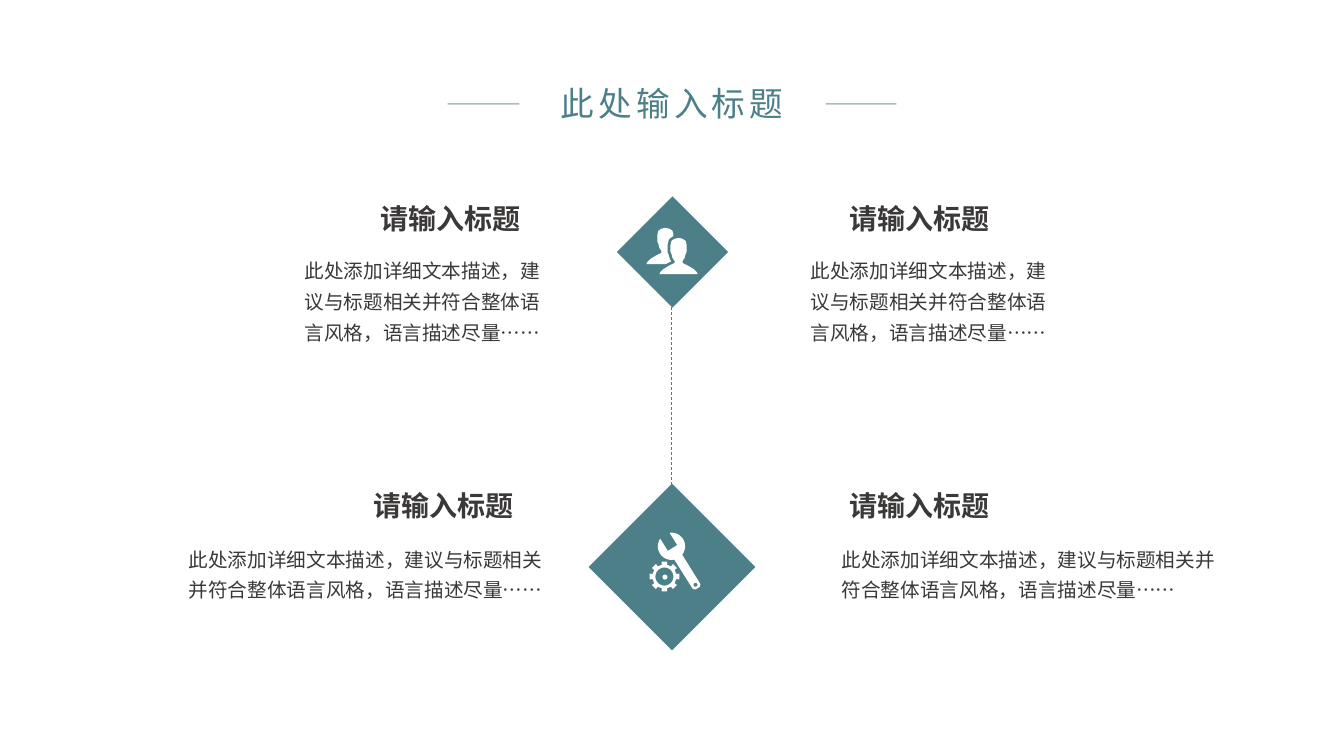
from math import cos, radians, sin

from lxml import etree
from pptx import Presentation
from pptx.dml.color import RGBColor
from pptx.enum.dml import MSO_LINE
from pptx.enum.shapes import MSO_CONNECTOR, MSO_SHAPE
from pptx.enum.text import MSO_ANCHOR, PP_ALIGN
from pptx.oxml.ns import qn
from pptx.util import Inches, Pt

LEFT, CENTER, RIGHT = PP_ALIGN.LEFT, PP_ALIGN.CENTER, PP_ALIGN.RIGHT
TOP = MSO_ANCHOR.TOP
RECTANGLE, ELLIPSE = MSO_SHAPE.RECTANGLE, MSO_SHAPE.OVAL
STRAIGHT = MSO_CONNECTOR.STRAIGHT
SOLID, DASH = MSO_LINE.SOLID, MSO_LINE.DASH
FONT = "Noto Sans CJK SC"
TEAL, BROWN, DARK, WHITE = "4D7F89", "A2633C", "3B3838", "FFFFFF"
hex_color = RGBColor.from_string

HEADING = "请输入标题"
DESCRIPTION = "此处添加详细文本描述，建议与标题相关并符合整体语言风格，语言描述尽量……"


def write(box, text, size, line_height, color, align, bold=False):
    """Fill a box with one paragraph and return its run."""
    frame = box.text_frame
    frame.word_wrap = True
    frame.vertical_anchor = TOP
    para = frame.paragraphs[0]
    para.alignment = align
    para.line_spacing = Pt(line_height)
    span = para.add_run()
    span.text = text
    span.font.size = Pt(size)
    span.font.bold = bold
    span.font.color.rgb = hex_color(color)
    span.font.name = FONT
    etree.SubElement(span.font._element, qn("a:ea"), typeface=FONT)
    return span


def arc(center_x, center_y, radius, start, end, steps=24):
    """Points along a circle, with angles in degrees."""
    angles = [radians(start + (end - start) * i / steps) for i in range(steps + 1)]
    return [(center_x + radius * cos(a), center_y + radius * sin(a)) for a in angles]


deck = Presentation()
deck.slide_width, deck.slide_height = Inches(13.33), Inches(7.5)
page = deck.slides.add_slide(deck.slide_layouts[5])

# Title
title = page.shapes.title
title.left, title.top = Inches(5.19), Inches(0.78)
title.width, title.height = Inches(2.95), Inches(0.5)
title_span = write(title, "此处输入标题", 24, 28.5, TEAL, CENTER)
title_span.font._element.set("spc", "300")

# Half-transparent lines beside the title, dashed line between the diamonds
for x1, y1, x2, y2, color, width, dash, opacity in [
    (4.44, 1.03, 5.15, 1.03, TEAL, 1, SOLID, 50),
    (8.19, 1.03, 8.89, 1.03, TEAL, 1, SOLID, 50),
    (6.66, 3.05, 6.66, 4.8, BROWN, 0.5, DASH, 100),
]:
    connector = page.shapes.add_connector(
        STRAIGHT, Inches(x1), Inches(y1), Inches(x2), Inches(y2))
    connector.line.color.rgb = hex_color(color)
    connector.line.width = Pt(width)
    connector.line.dash_style = dash
    properties = connector._element.spPr
    etree.SubElement(properties, qn("a:effectLst"))
    shade = next(properties.iter(qn("a:srgbClr")))
    etree.SubElement(shade, qn("a:alpha"), val=str(opacity * 1000))

# Four texts: heading left and top, then the description below it
for heading_left, heading_top, left, top, width, height, align in [
    (3.4, 1.95, 2.84, 2.45, 2.7, 1, CENTER),
    (8.05, 1.95, 7.92, 2.45, 2.58, 1, CENTER),
    (3.33, 4.8, 1.75, 5.31, 3.73, 0.68, RIGHT),
    (8.05, 4.8, 8.25, 5.31, 4.08, 0.68, LEFT),
]:
    heading = page.shapes.add_textbox(
        Inches(heading_left), Inches(heading_top), Inches(2.14), Inches(0.44))
    write(heading, HEADING, 20, 24, DARK, CENTER, bold=True)
    description = page.shapes.add_textbox(
        Inches(left), Inches(top), Inches(width), Inches(height))
    write(description, DESCRIPTION, 14, 22, DARK, align)

# Diamonds (squares on their corners) and the hub of the gear
for kind, left, top, side, turn, color in [
    (RECTANGLE, 6.28, 2.11, 0.78, 45, TEAL),
    (RECTANGLE, 6.08, 5.04, 1.17, 45, TEAL),
    (ELLIPSE, 6.57, 5.7, 0.05, 0, WHITE),
]:
    shape = page.shapes.add_shape(
        kind, Inches(left), Inches(top), Inches(side), Inches(side))
    shape.rotation = turn
    shape.shadow.inherit = False
    shape.fill.solid()
    shape.fill.fore_color.rgb = hex_color(color)
    shape.line.fill.background()

# Person: right half from crown to shoulder, mirrored for the left half
right_half = [(0, 0), (0.04, 0.01), (0.07, 0.03), (0.08, 0.07), (0.08, 0.11),
              (0.08, 0.14), (0.07, 0.16), (0.06, 0.2), (0.04, 0.23),
              (0.04, 0.25), (0.1, 0.28), (0.15, 0.31), (0.18, 0.34), (0.19, 0.36)]
left_half = [(-x, y) for x, y in reversed(right_half)]
person = right_half + left_half
back_person, front_person = [
    [(axis + x, crown + y) for x, y in person]
    for axis, crown in [(6.6, 2.26), (6.73, 2.36)]]

# Gear: eight teeth, each two points on the rim and two on the root circle
TEETH = 8
gear_center = (6.59, 5.72)
gear = []
for tooth in range(TEETH):
    middle = tooth * 360 / TEETH
    for radius, offset in [(0.12, -12), (0.15, -11), (0.15, 11), (0.12, 12)]:
        gear += arc(*gear_center, radius, middle + offset, middle + offset, 1)[:1]
gear_hole = arc(*gear_center, 0.09, 0, 360)

# Wrench: drawn along the x axis from the middle of its head, then turned
HEAD_RADIUS, JAW, HANDLE, LENGTH, TILT = 0.135, 0.055, 0.045, 0.49, radians(58)
head_x, head_y = 6.66, 5.42
level_wrench = (
    arc(0, 0, HEAD_RADIUS, 156, 20)
    + [(LENGTH - 0.02, HANDLE), (LENGTH, HANDLE - 0.02),
       (LENGTH, 0.02 - HANDLE), (LENGTH - 0.02, -HANDLE)]
    + arc(0, 0, HEAD_RADIUS, -20, -156)
    + [(0.02, -JAW), (0.02, JAW)])
level_hole = arc(LENGTH - 0.04, 0, 0.02, 0, 360)
wrench, wrench_hole = [
    [(head_x + x * cos(TILT) - y * sin(TILT), head_y + x * sin(TILT) + y * cos(TILT))
     for x, y in outline]
    for outline in (level_wrench, level_hole)]

# Icons: a teal halo parts the front person from the back one
for outlines, color, halo in [
    ([back_person], WHITE, 0),
    ([front_person], TEAL, 4),
    ([front_person], WHITE, 0),
    ([wrench, wrench_hole], WHITE, 0),
    ([gear, gear_hole], WHITE, 0),
]:
    contours = [[(Inches(x), Inches(y)) for x, y in outline] for outline in outlines]
    builder = page.shapes.build_freeform(*contours[0][0])
    for contour in contours:
        builder.move_to(*contour[0])
        builder.add_line_segments(contour[1:], close=True)
    icon = builder.convert_to_shape()
    icon.shadow.inherit = False
    icon.fill.solid()
    icon.fill.fore_color.rgb = hex_color(color)
    if halo:
        icon.line.color.rgb = hex_color(color)
        icon.line.width = Pt(halo)
    else:
        icon.line.fill.background()

deck.save("out.pptx")
